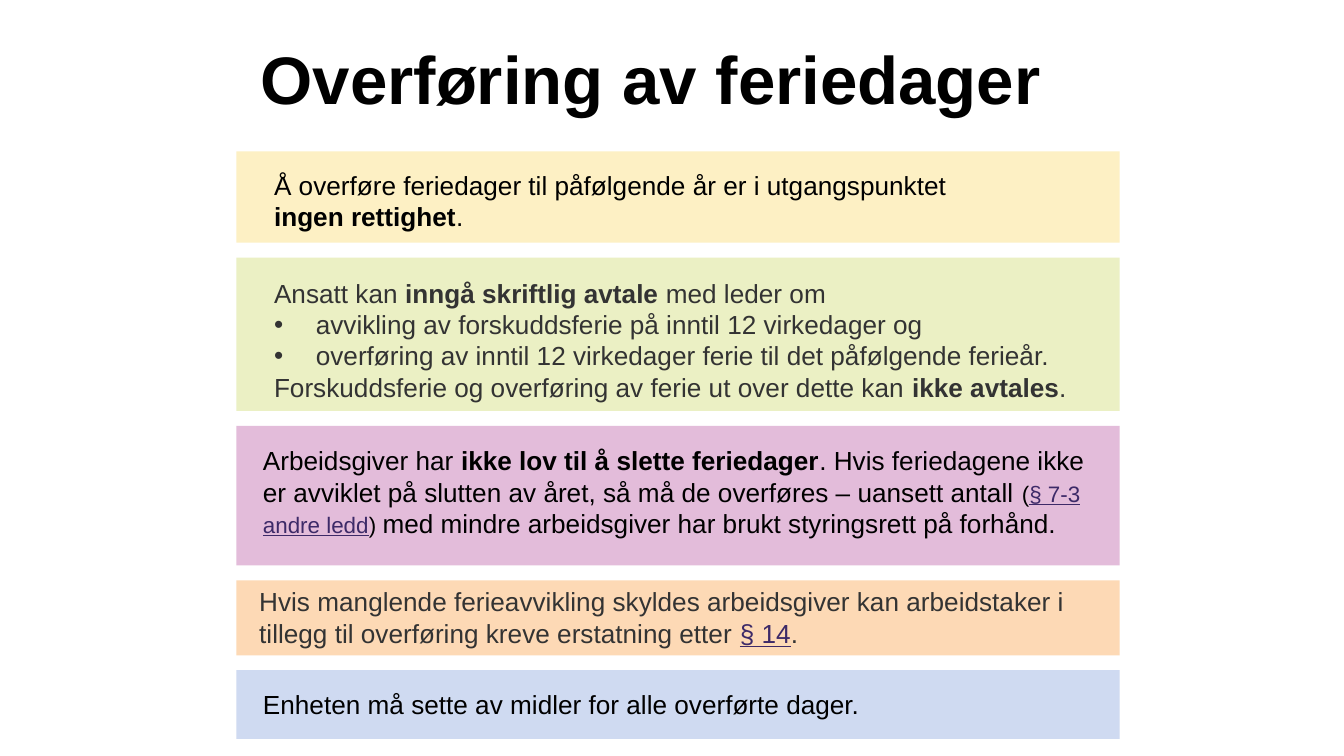
from pptx import Presentation
from pptx import util as u
from pptx.dml.color import RGBColor
from pptx.enum import shapes, text
from pptx.oxml import parse_xml
from pptx.oxml.ns import nsdecls

BLACK = RGBColor(0x00, 0x00, 0x00)
GREY = RGBColor(0x33, 0x33, 0x33)
LINK = RGBColor(0x3D, 0x2A, 0x68)
YELLOW = RGBColor(0xFD, 0xF0, 0xC4)
GREEN = RGBColor(0xEB, 0xF0, 0xC4)
PINK = RGBColor(0xE3, 0xBC, 0xDA)
ORANGE = RGBColor(0xFD, 0xD9, 0xB5)
BLUE = RGBColor(0xCF, 0xDA, 0xF1)

# Run formats
BOLD = {"bold": True}
SMALL = {"size": u.Pt(12)}
LINKED = {"color": LINK, "underline": True}

BAND_LEFT, BAND_WIDTH, BAND_GAP = 4.47, 16.69, 0.28
FIRST_TOP = 2.86
BULLET_INDENT = u.Cm(0.79)
BREAK = ("\n", {})

# Each paragraph is (is bulleted, [(words, format), ...])
BANDS = [
    {"fill": YELLOW, "height": 1.73, "box": (4.93, 3.07, 15.9, 2.24), "color": BLACK,
     "paragraphs": [
         (False, [("Å overføre feriedager til påfølgende år er i utgangspunktet", {}), BREAK,
                  ("ingen rettighet", BOLD), (".", {})])]},
    {"fill": GREEN, "height": 2.9, "box": (4.93, 5.11, 15.77, 2.64), "color": GREY,
     "paragraphs": [
         (False, [("Ansatt kan ", {}), ("inngå skriftlig avtale", BOLD), (" med leder om", {})]),
         (True, [("avvikling av forskuddsferie på inntil 12 virkedager og", {})]),
         (True, [("overføring av inntil 12 virkedager ferie til det påfølgende ferieår.", {})]),
         (False, [("Forskuddsferie og overføring av ferie ut over dette kan ", {}),
                  ("ikke avtales", BOLD), (".", {})])]},
    {"fill": PINK, "height": 2.64, "box": (4.72, 8.28, 16.51, 2.06), "color": BLACK,
     "paragraphs": [
         (False, [("Arbeidsgiver har ", {}), ("ikke lov til å slette feriedager", BOLD),
                  (". Hvis feriedagene ikke er avviklet på slutten av året, "
                   "så må de overføres – uansett antall ", {}),
                  ("(", SMALL), ("§ 7-3 andre ledd", {**SMALL, **LINKED}), (") ", SMALL),
                  ("med mindre arbeidsgiver har brukt styringsrett på forhånd.", {})])]},
    {"fill": ORANGE, "height": 1.42, "box": (4.65, 10.95, 16.03, 2.24), "color": GREY,
     "paragraphs": [
         (False, [("Hvis manglende ferieavvikling skyldes arbeidsgiver kan arbeidstaker i "
                   "tillegg til overføring kreve erstatning etter ", {}),
                  ("§ 14", LINKED), (".", {})])]},
    {"fill": BLUE, "height": 1.3, "box": (4.72, 12.88, 16.21, 1.63), "color": BLACK,
     "paragraphs": [
         (False, [("Enheten må sette av midler for alle overførte dager.", {})])]},
]


def format_font(font, color, **values):
    font.color.rgb = color
    for name, value in {"name": "Arial", **values}.items():
        setattr(font, name, value)


def add_title(slide, words):
    title = slide.shapes.title
    place = {"left": 0.4, "top": 0.56, "width": 23.8, "height": 1.8}
    for name, value in place.items():
        setattr(title, name, u.Cm(value))
    frame = title.text_frame
    frame.text = words
    frame.auto_size = text.MSO_AUTO_SIZE.SHAPE_TO_FIT_TEXT
    frame.paragraphs[0].alignment = text.PP_ALIGN.CENTER
    format_font(frame.paragraphs[0].runs[0].font, BLACK, size=u.Pt(36), bold=True)


def add_band(slide, top, height, fill):
    band = slide.shapes.add_shape(
        shapes.MSO_SHAPE.RECTANGLE,
        *(u.Cm(value) for value in (BAND_LEFT, top, BAND_WIDTH, height)))
    band.shadow.inherit = False
    band.fill.solid()
    band.fill.fore_color.rgb = fill
    band.line.fill.background()


def add_bullet(paragraph):
    properties = paragraph._p.get_or_add_pPr()
    properties.set("marL", str(BULLET_INDENT))
    properties.set("indent", str(-BULLET_INDENT))
    properties.append(parse_xml(f'<a:buFont {nsdecls("a")} typeface="Arial"/>'))
    properties.append(parse_xml(f'<a:buChar {nsdecls("a")} char="•"/>'))


def add_text(slide, box, color, paragraphs):
    frame = slide.shapes.add_textbox(*(u.Cm(value) for value in box)).text_frame
    frame.word_wrap = True
    frame.auto_size = text.MSO_AUTO_SIZE.SHAPE_TO_FIT_TEXT
    for index, (bulleted, runs) in enumerate(paragraphs):
        paragraph = frame.add_paragraph() if index else frame.paragraphs[0]
        if bulleted:
            add_bullet(paragraph)
        for words, values in runs:
            if words == "\n":
                paragraph.add_line_break()
                continue
            run = paragraph.add_run()
            run.text = words
            format_font(run.font, **{"color": color, "size": u.Pt(14), **values})


def main():
    presentation = Presentation()
    presentation.slide_width = u.Cm(25.4)
    presentation.slide_height = u.Cm(14.29)
    slide = presentation.slides.add_slide(presentation.slide_layouts[5])

    add_title(slide, "Overføring av feriedager")

    # Coloured bands, stacked with equal gaps
    top = FIRST_TOP
    for band in BANDS:
        add_band(slide, top, band["height"], band["fill"])
        top += band["height"] + BAND_GAP

    # Texts on top of the bands
    for band in BANDS:
        add_text(slide, band["box"], band["color"], band["paragraphs"])

    presentation.save("out.pptx")


if __name__ == "__main__":
    main()
